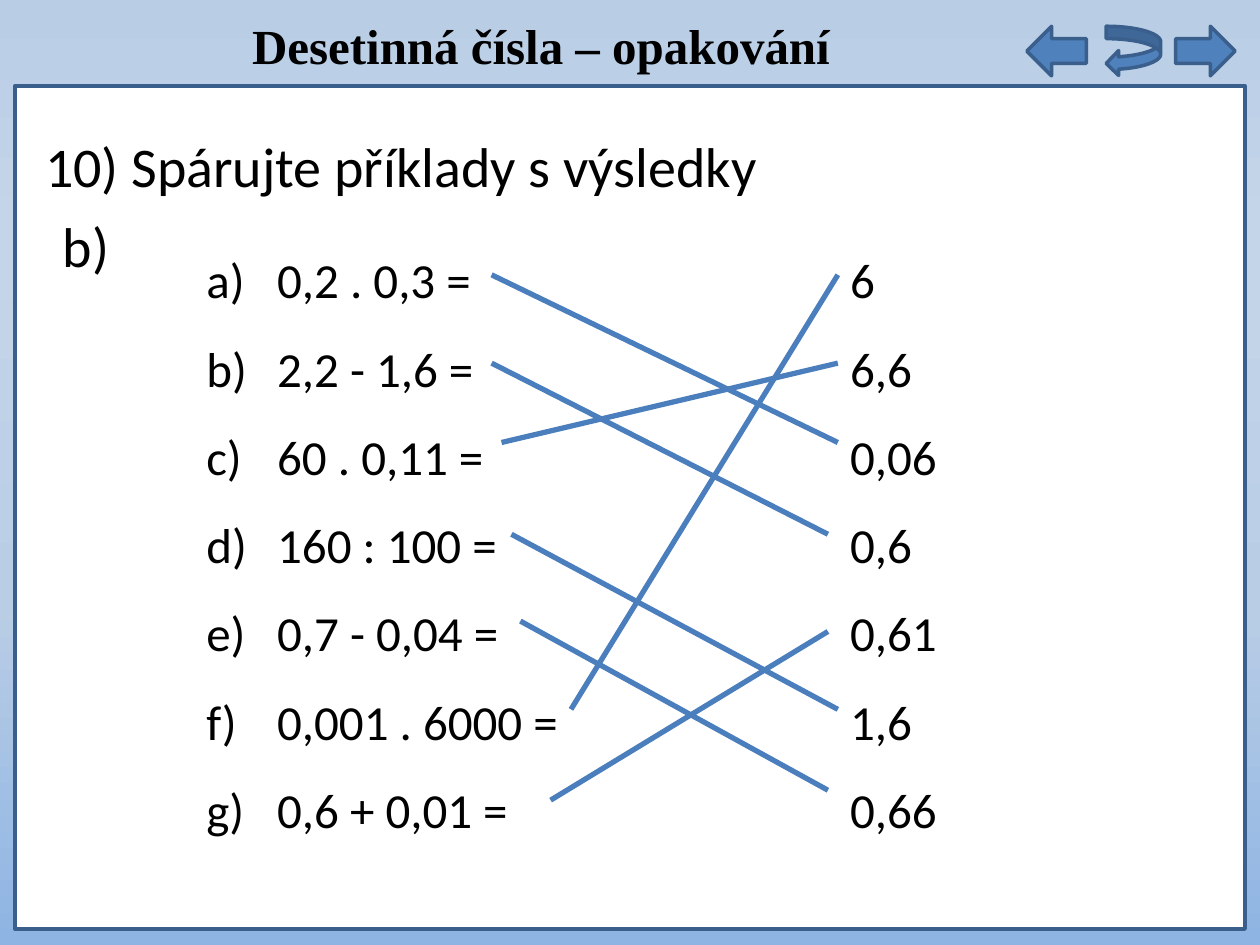
from lxml import etree
from pptx import Presentation
from pptx.dml.color import RGBColor
from pptx.enum.shapes import MSO_CONNECTOR, MSO_SHAPE as Preset
from pptx.enum.text import MSO_ANCHOR as Anchor, MSO_AUTO_SIZE as AutoSize, PP_ALIGN as Align
from pptx.oxml.ns import qn
from pptx.util import Cm, Pt

BLACK = RGBColor(0x00, 0x00, 0x00)
WHITE = RGBColor(0xFF, 0xFF, 0xFF)
BLUE = RGBColor(0x4F, 0x81, 0xBD)
OUTLINE = RGBColor(0x3A, 0x5F, 0x8C)
PAIR_LINE = RGBColor(0x4B, 0x7E, 0xBC)
SKY = RGBColor(0xB9, 0xCD, 0xE5)
PALE_SKY = RGBColor(0xC5, 0xD5, 0xE9)
DEEP_SKY = RGBColor(0x8E, 0xB4, 0xE3)


def write_text(shape, lines, size=28, font="Calibri", bold=False, align=Align.LEFT,
               anchor=Anchor.TOP, spacing=1.0, auto_size=AutoSize.NONE, lettered=False):
    frame = shape.text_frame
    frame.word_wrap = True
    frame.auto_size = auto_size
    frame.vertical_anchor = anchor
    frame.text = "\n".join(lines)
    for paragraph in frame.paragraphs:
        paragraph.alignment = align
        paragraph.line_spacing = spacing
        paragraph.font.size = Pt(size)
        paragraph.font.name = font
        paragraph.font.bold = bold
        paragraph.font.color.rgb = BLACK
        if lettered:
            properties = paragraph._p.get_or_add_pPr()
            properties.set("marL", str(Cm(1.43)))
            properties.set("indent", str(-Cm(1.43)))
            numbering = etree.Element(qn("a:buAutoNum"), type="alphaLcParenR")
            properties.find(qn("a:lnSpc")).addnext(numbering)


def add_filled_shape(preset, left, top, width, height, color):
    shape = slide.shapes.add_shape(preset, Cm(left), Cm(top), Cm(width), Cm(height))
    shape.shadow.inherit = False
    shape.fill.solid()
    shape.fill.fore_color.rgb = color
    shape.line.color.rgb = OUTLINE
    shape.line.width = Pt(2)
    return shape


presentation = Presentation()
presentation.slide_width = Cm(25.4)
presentation.slide_height = Cm(19.05)
slide = presentation.slides.add_slide(presentation.slide_layouts[5])

# Background gradient, top to bottom
background = slide.background.fill
background.gradient()
background.gradient_angle = 270
stops = slide.element.find(".//" + qn("a:gsLst"))
for stop in list(stops):
    stops.remove(stop)
for percent, color in [(0, SKY), (25, PALE_SKY), (64, SKY), (100, DEEP_SKY)]:
    stop = etree.SubElement(stops, qn("a:gs"), pos=str(percent * 1000))
    etree.SubElement(stop, qn("a:srgbClr"), val=str(color))

# White panel and navigation arrows
add_filled_shape(Preset.RECTANGLE, 0.3, 1.73, 24.8, 17, WHITE)
add_filled_shape(Preset.RIGHT_ARROW, 23.7, 0.53, 1.2, 1, BLUE)
back_arrow = add_filled_shape(Preset.RIGHT_ARROW, 20.7, 0.53, 1.2, 1, BLUE)
back_arrow.element.spPr.xfrm.set("flipH", "1")
add_filled_shape(Preset.CURVED_LEFT_ARROW, 22.3, 0.53, 1.1, 1, BLUE)

# Title
title = slide.shapes.title
title.left, title.top, title.width, title.height = Cm(0.08), Cm(-0.08), Cm(21.65), Cm(1.96)
write_text(title, ["Desetinná čísla – opakování"], font="Times New Roman", bold=True,
           align=Align.CENTER, anchor=Anchor.MIDDLE)

# Task heading, exercises, results and part label
exercises = ["0,2 . 0,3 =", "2,2 - 1,6 =", "60 . 0,11 =", "160 : 100 =",
             "0,7 - 0,04 =", "0,001 . 6000 =", "0,6 + 0,01 ="]
results = ["6", "6,6", "0,06", "0,6", "0,61", "1,6", "0,66"]
heading_format = dict(size=32, anchor=Anchor.MIDDLE)
list_format = dict(spacing=1.5, auto_size=AutoSize.SHAPE_TO_FIT_TEXT)
text_boxes = [
    (0.66, 2.34, 21.65, 1.96, ["10) Spárujte příklady s výsledky"], heading_format),
    (3.91, 4.32, 9.37, 12.65, exercises, dict(list_format, lettered=True)),
    (16.89, 4.32, 2.79, 12.83, results, list_format),
    (1.02, 3.96, 1.73, 1.96, ["b)"], heading_format),
]
for left, top, width, height, lines, text_format in text_boxes:
    box = slide.shapes.add_textbox(Cm(left), Cm(top), Cm(width), Cm(height))
    write_text(box, lines, **text_format)

# Lines from each exercise to its result
exercise_ends = [(9.91, 5.54), (9.91, 7.32), (10.11, 8.92), (10.31, 10.77),
                 (10.49, 12.52), (11.51, 14.3), (11.1, 16.13)]
result_ends = [(16.89, 5.54), (16.89, 7.32), (16.89, 8.92), (16.69, 10.77),
               (16.69, 12.73), (16.89, 14.3), (16.69, 15.93)]
matching_results = ["0,06", "0,6", "6,6", "1,6", "0,66", "6", "0,61"]
for (start_x, start_y), result in zip(exercise_ends, matching_results):
    end_x, end_y = result_ends[results.index(result)]
    connector = slide.shapes.add_connector(
        MSO_CONNECTOR.STRAIGHT, Cm(start_x), Cm(start_y), Cm(end_x), Cm(end_y))
    connector.line.color.rgb = PAIR_LINE
    connector.line.width = Pt(3)
    etree.SubElement(connector.element.spPr, qn("a:effectLst"))

presentation.save("out.pptx")
